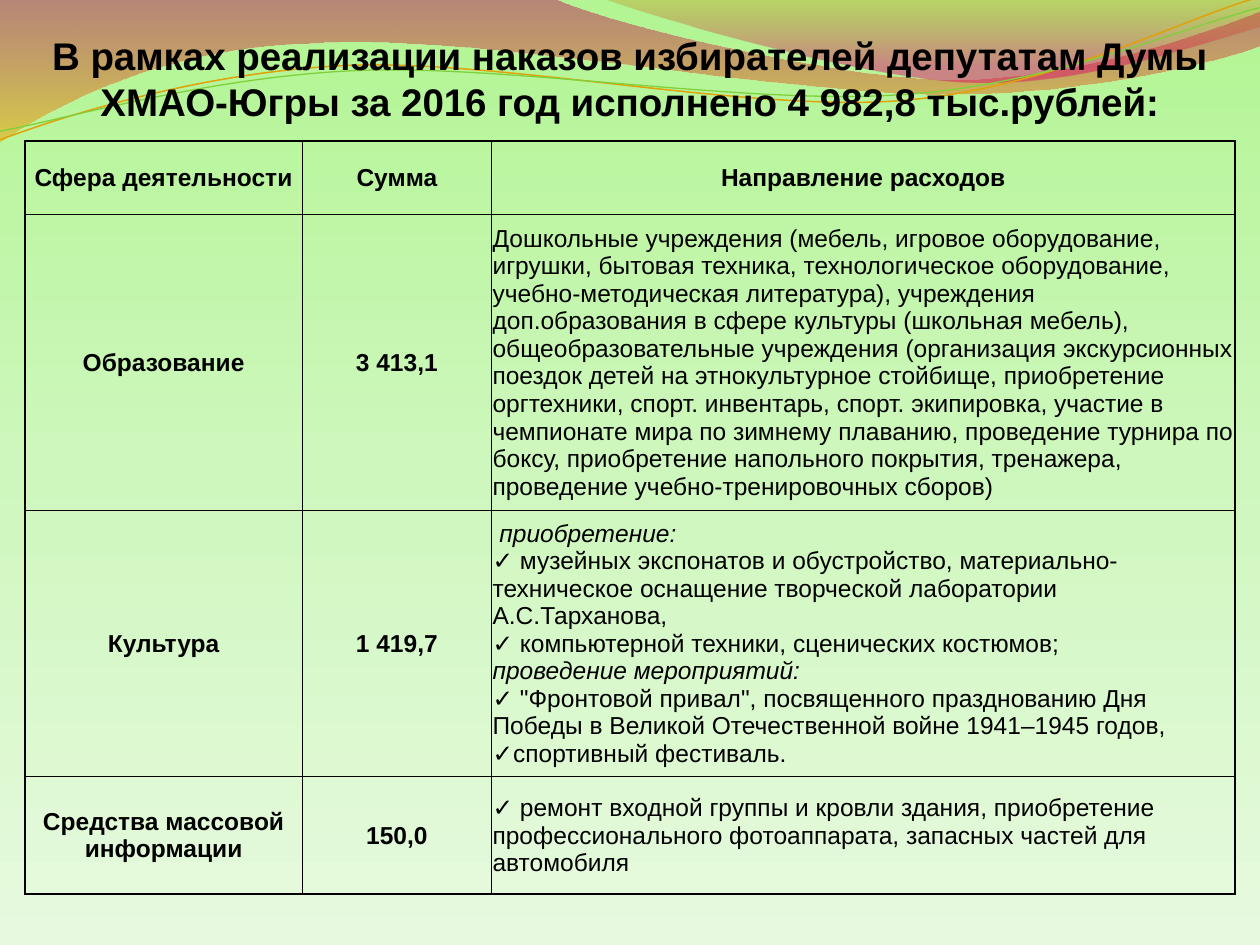
from dataclasses import dataclass
from typing import Optional

from lxml.etree import SubElement
from pptx import Presentation
from pptx.dml.color import RGBColor
from pptx.enum.text import MSO_ANCHOR as Anchor, MSO_AUTO_SIZE as AutoSize, PP_ALIGN as Align
from pptx.oxml import parse_xml
from pptx.oxml.ns import nsdecls, qn
from pptx.util import Pt


@dataclass(frozen=True)
class Stop:
    pos: int
    color: str
    alpha: int = 100


@dataclass(frozen=True)
class Theme:
    font: str = "Arial"
    ink: str = "000000"
    title_size: float = 22
    body_size: float = 14
    outer_border: float = 1
    inner_border: float = 0.5
    background: tuple = (Stop(0, "B2F592"), Stop(50, "CEF7BD"), Stop(100, "E7FADF"))
    left_wave: tuple = (Stop(0, "BD0059", 45), Stop(100, "F0AB00", 55))
    right_wave: tuple = (Stop(0, "C38B00", 30), Stop(80, "E1006B", 45))
    gold: str = "E0A209"
    green: str = "7FD13B"


@dataclass(frozen=True)
class Wave:
    start: tuple
    steps: tuple
    stops: tuple = ()
    line: Optional[str] = None
    width: float = 0


@dataclass(frozen=True)
class Item:
    text: str
    bullet: bool = False
    italic: bool = False


@dataclass(frozen=True)
class Row:
    height: float
    sphere: str
    amount: str
    details: tuple


THEME = Theme()
WAVES = (
    Wave((0, 0), ((316.8, -0.7), (342.7, 12.2, 478.1, 45.4, 545.8, 45.4),
                  (614.2, 45.4, 689.8, 18.7, 720, 6.5), (720.7, 25.9),
                  (707.8, 31.7, 626.4, 54.7, 537.1, 54), (447.8, 54, 275, 20.2, 185, 24.5),
                  (92.9, 25.9, 33.1, 59.8, -0.7, 81.4)), stops=THEME.left_wave),
    Wave((344.9, -0.7), ((366.5, 7.9, 491, 44.6, 553.7, 46.8),
                         (616.3, 49.7, 691.9, 23, 720, 15.1), (720, 0)), stops=THEME.right_wave),
    Wave((0, 79.9), ((34.6, 67, 113.8, 41, 199.4, 37.4), (284.4, 33.8, 427, 64.1, 513.4, 57.6),
                     (599.8, 51.1, 675.4, 10.8, 718.6, -1.4)), line=THEME.gold, width=0.85),
    Wave((0, 74.9), ((33.8, 69.1, 118.1, 43.9, 203.8, 40.3), (290.2, 36.7, 429.8, 60.5, 516.2, 54),
                     (601.9, 48.2, 677.5, 15.1, 720, 4.3)), line=THEME.green, width=0.75),
)
TITLE = ("В рамках реализации наказов избирателей депутатам Думы ХМАО-Югры "
         "за 2016 год исполнено 4 982,8 тыс.рублей:")
HEADER_HEIGHT = 41.8
HEADERS = ("Сфера деятельности", "Сумма", "Направление расходов")
COLUMNS = (158.6, 108, 425)
ROWS = (
    Row(169.1, "Образование", "3 413,1", (Item(
        "Дошкольные учреждения (мебель, игровое оборудование, игрушки, бытовая техника, "
        "технологическое оборудование, учебно-методическая литература), учреждения "
        "доп.образования в сфере культуры (школьная мебель), общеобразовательные учреждения "
        "(организация экскурсионных поездок детей на этнокультурное стойбище, приобретение "
        "оргтехники, спорт. инвентарь, спорт. экипировка, участие в чемпионате мира по зимнему "
        "плаванию, проведение турнира по боксу, приобретение напольного покрытия, тренажера, "
        "проведение учебно-тренировочных сборов)"),)),
    Row(152, "Культура", "1 419,7", (
        Item(" приобретение:", italic=True),
        Item(" музейных экспонатов и обустройство, материально-техническое оснащение "
             "творческой лаборатории А.С.Тарханова,", bullet=True),
        Item(" компьютерной техники, сценических костюмов;", bullet=True),
        Item("проведение мероприятий:", italic=True),
        Item(' "Фронтовой привал", посвященного празднованию Дня Победы '
             "в Великой Отечественной войне 1941–1945 годов,", bullet=True),
        Item("спортивный фестиваль.", bullet=True))),
    Row(67.3, "Средства массовой информации", "150,0", (Item(
        " ремонт входной группы и кровли здания, приобретение профессионального "
        "фотоаппарата, запасных частей для автомобиля", bullet=True),)),
)


def write(p, text: str, *, size: float = THEME.body_size, bold: bool = False,
          italic: bool = False, align=Align.LEFT, bullet: bool = False) -> None:
    p.alignment = align
    r = p.add_run()
    r.text = text
    f = r.font
    f.name, f.size, f.bold, f.italic = THEME.font, Pt(size), bold, italic
    f.color.rgb = RGBColor.from_string(THEME.ink)
    if bullet:
        pr = p._p.get_or_add_pPr()
        pr.set("marL", "0")
        pr.set("indent", "0")
        SubElement(pr, qn("a:buFont"), typeface=THEME.font)
        SubElement(pr, qn("a:buChar"), char="✓")


def paint_gradient(solid, stops: tuple) -> None:
    marks = "".join(
        f'<a:gs pos="{s.pos * 1000}"><a:srgbClr val="{s.color}">'
        f'<a:alpha val="{s.alpha * 1000}"/></a:srgbClr></a:gs>' for s in stops)
    solid.getparent().replace(solid, parse_xml(
        f'<a:gradFill {nsdecls("a")} rotWithShape="1"><a:gsLst>{marks}</a:gsLst>'
        '<a:lin ang="5400000" scaled="0"/></a:gradFill>'))


def bend(sp, steps: tuple) -> None:
    for segment, step in zip(sp._element.xpath(".//a:lnTo"), steps):
        if len(step) == 6:
            points = "".join(f'<a:pt x="{Pt(x) - sp.left}" y="{Pt(y) - sp.top}"/>'
                             for x, y in zip(step[::2], step[1::2]))
            segment.getparent().replace(segment, parse_xml(
                f'<a:cubicBezTo {nsdecls("a")}>{points}</a:cubicBezTo>'))


def draw_wave(s, wave: Wave) -> None:
    builder = s.shapes.build_freeform(*map(Pt, wave.start))
    builder.add_line_segments([tuple(map(Pt, step[-2:])) for step in wave.steps],
                              close=bool(wave.stops))
    sp = builder.convert_to_shape()
    bend(sp, wave.steps)
    sp.shadow.inherit = False
    if wave.stops:
        sp.fill.solid()
        paint_gradient(sp._element.spPr.find(qn("a:solidFill")), wave.stops)
        sp.line.fill.background()
    else:
        sp.fill.background()
        sp.line.color.rgb = RGBColor.from_string(wave.line)
        sp.line.width = Pt(wave.width)


def draw_title(s) -> None:
    sp = s.shapes.title
    s.shapes._spTree.append(sp._element)
    sp.left, sp.top, sp.width, sp.height = Pt(0), Pt(14.6), Pt(720), Pt(119)
    tf = sp.text_frame
    tf.word_wrap, tf.auto_size, tf.vertical_anchor = True, AutoSize.NONE, Anchor.TOP
    write(tf.paragraphs[0], TITLE, size=THEME.title_size, bold=True, align=Align.CENTER)


def format_cell(cell, outer_sides: dict) -> None:
    cell.vertical_anchor = Anchor.MIDDLE
    cell.margin_left = cell.margin_right = cell.margin_top = Pt(0.7)
    cell.margin_bottom = Pt(0)
    pr = cell._tc.get_or_add_tcPr()
    for side, outer in outer_sides.items():
        width = Pt(THEME.outer_border if outer else THEME.inner_border)
        pr.append(parse_xml(
            f'<a:ln{side} {nsdecls("a")} w="{width}"><a:solidFill>'
            f'<a:srgbClr val="{THEME.ink}"/></a:solidFill></a:ln{side}>'))
    cell.fill.background()


def draw_table(s) -> None:
    heights = (HEADER_HEIGHT, *(row.height for row in ROWS))
    table = s.shapes.add_table(len(heights), len(COLUMNS), Pt(14.2), Pt(80.6),
                               Pt(sum(COLUMNS)), Pt(sum(heights))).table
    table.first_row = table.horz_banding = False
    for column, width in zip(table.columns, COLUMNS):
        column.width = Pt(width)
    for row, height in zip(table.rows, heights):
        row.height = Pt(height)
    last_row, last_col = len(heights) - 1, len(COLUMNS) - 1
    grid = (HEADERS, *((row.sphere, row.amount, row.details) for row in ROWS))
    for i, values in enumerate(grid):
        for j, value in enumerate(values):
            cell = table.cell(i, j)
            format_cell(cell, {"L": j == 0, "R": j == last_col, "T": i == 0, "B": i == last_row})
            tf = cell.text_frame
            if isinstance(value, str):
                write(tf.paragraphs[0], value, bold=True, align=Align.CENTER)
                continue
            for n, item in enumerate(value):
                p = tf.add_paragraph() if n else tf.paragraphs[0]
                write(p, item.text, italic=item.italic, bullet=item.bullet)


def main() -> None:
    prs = Presentation()
    prs.slide_width, prs.slide_height = Pt(720), Pt(540)
    s = prs.slides.add_slide(prs.slide_layouts[5])
    s.background.fill.solid()
    paint_gradient(s._element.xpath(".//p:bgPr/a:solidFill")[0], THEME.background)
    for wave in WAVES:
        draw_wave(s, wave)
    draw_title(s)
    draw_table(s)
    prs.save("out.pptx")


if __name__ == "__main__":
    main()
